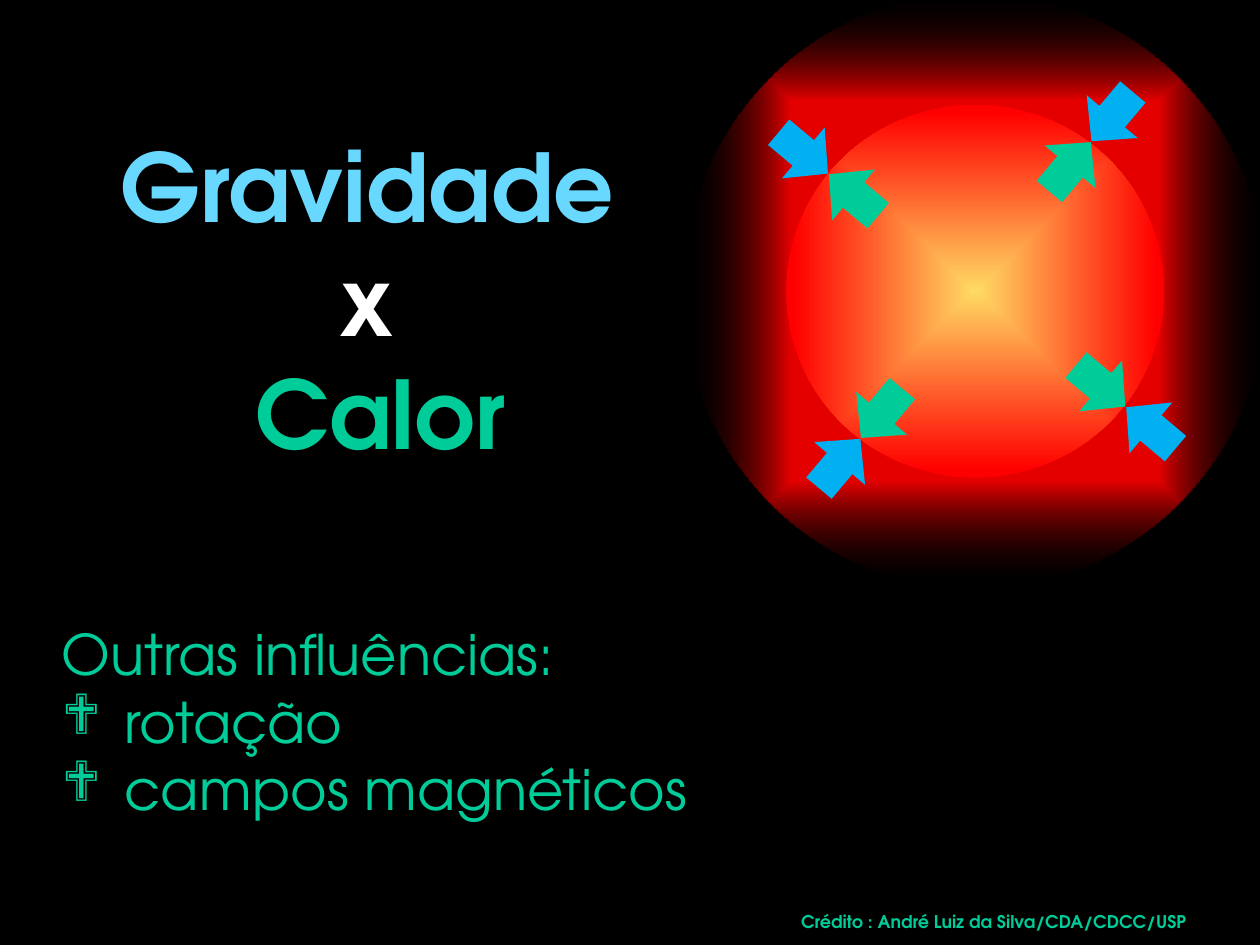
from math import cos, radians, sin

from lxml.etree import SubElement
from pptx import Presentation
from pptx.dml.color import RGBColor
from pptx.enum.shapes import MSO_SHAPE
from pptx.enum.text import MSO_ANCHOR, MSO_AUTO_SIZE, PP_ALIGN
from pptx.oxml.ns import qn
from pptx.util import Pt

FONT = "TeX Gyre Adventor"
GREEN = "00CC99"
GRAVITY_BLUE = "00B0F0"
ARROW_WIDTH, ARROW_HEIGHT = 38, 36.8
REACH = 18.7
CONTACTS = [
    (40, 491.8, 250.5),
    (130, 473.4, 99.4),
    (220, 623.5, 81),
    (310, 643.3, 232.5),
]


def color(value):
    """Turn a hex string into a colour."""
    return RGBColor.from_string(value)


def write(paragraph, text, size=32, fill=GREEN, bold=False):
    """Add a formatted run to a paragraph."""
    run = paragraph.add_run()
    run.text = text
    run.font.name = FONT
    run.font.size = Pt(size)
    run.font.bold = bold
    run.font.color.rgb = color(fill)


def place(box, left, top, width, height):
    """Move and size a text holder and return its wrapped frame."""
    box.left, box.top = Pt(left), Pt(top)
    box.width, box.height = Pt(width), Pt(height)
    frame = box.text_frame
    frame.word_wrap = True
    frame.auto_size = MSO_AUTO_SIZE.NONE
    return frame


def set_bullet(paragraph, mark=None, indent=0):
    """Give a paragraph a hanging bullet, or none."""
    properties = paragraph._p.get_or_add_pPr()
    properties.set("marL", str(Pt(indent)))
    properties.set("indent", str(-Pt(indent)))
    if mark:
        SubElement(properties, qn("a:buFont"), typeface="Wingdings")
        SubElement(properties, qn("a:buChar"), char=mark)
    else:
        SubElement(properties, qn("a:buNone"))


def add_plain_shape(shapes, preset, left, top, width, height):
    """Add a preset shape without line or shadow."""
    shape = shapes.add_shape(preset, Pt(left), Pt(top), Pt(width), Pt(height))
    shape.shadow.inherit = False
    shape.line.fill.background()
    return shape


def add_glow(shapes, left, top, width, height, stops):
    """Add an ellipse whose colours spread out from its centre."""
    glow = add_plain_shape(shapes, MSO_SHAPE.OVAL, left, top, width, height)
    glow.fill.gradient()
    gradient = glow.element.spPr.find(qn("a:gradFill"))
    gradient.clear()
    gradient.set("rotWithShape", "1")
    stop_list = SubElement(gradient, qn("a:gsLst"))
    for position, tint, opacity in stops:
        stop = SubElement(stop_list, qn("a:gs"), pos=str(position * 1000))
        shade = SubElement(stop, qn("a:srgbClr"), val=tint)
        if opacity < 100:
            SubElement(shade, qn("a:alpha"), val=str(opacity * 1000))
    spread = SubElement(gradient, qn("a:path"), path="shape")
    SubElement(spread, qn("a:fillToRect"), l="50000", t="50000", r="50000", b="50000")


def add_force(shapes, angle, contact_x, contact_y, fill):
    """Add an arrow whose tip touches the contact point."""
    center_x = contact_x + REACH * sin(radians(angle))
    center_y = contact_y - REACH * cos(radians(angle))
    force = add_plain_shape(
        shapes, MSO_SHAPE.DOWN_ARROW,
        center_x - ARROW_WIDTH / 2, center_y - ARROW_HEIGHT / 2,
        ARROW_WIDTH, ARROW_HEIGHT,
    )
    force.rotation = angle % 360
    force.fill.solid()
    force.fill.fore_color.rgb = color(fill)


def add_heading(title):
    """Fill the title with the two opposing forces."""
    frame = place(title, 59.8, 116.6, 315.4, 108)
    frame.vertical_anchor = MSO_ANCHOR.MIDDLE
    heading = frame.paragraphs[0]
    heading.alignment = PP_ALIGN.CENTER
    write(heading, "Gravidade ", size=54, fill="69D8FF", bold=True)
    heading.add_line_break()
    write(heading, "x ", size=54, fill="FFFFFF", bold=True)
    heading.add_line_break()
    write(heading, "Calor", size=54, bold=True)


def add_influences(body):
    """Fill the body with the list of other influences."""
    frame = place(body, 28.1, 350.6, 658, 123.8)
    lines = [("Outras influências:", None, 0), ("rotação", "❖", 36), ("campos magnéticos", "❖", 36)]
    for index, (text, mark, indent) in enumerate(lines):
        line = frame.add_paragraph() if index else frame.paragraphs[0]
        line.alignment = PP_ALIGN.JUSTIFY
        line.space_before = Pt(0)
        set_bullet(line, mark, indent)
        write(line, text)


def add_star(shapes):
    """Draw the star's halo and its core."""
    star = shapes.add_group_shape().shapes
    add_glow(star, 390.2, -4.3, 333.4, 340.6, [(63, "FF0000", 89), (100, "000000", 0)])
    add_glow(star, 449.3, 59.8, 216, 213.1, [(0, "FFD963", 100), (96, "FF0000", 100)])


def main():
    """Build the slide and save it."""
    deck = Presentation()
    deck.slide_width, deck.slide_height = Pt(720), Pt(540)
    slide = deck.slides.add_slide(deck.slide_layouts[1])
    slide.background.fill.solid()
    slide.background.fill.fore_color.rgb = color("000000")
    add_heading(slide.shapes.title)
    add_influences(slide.placeholders[1])
    add_star(slide.shapes)
    credit = place(slide.shapes.add_textbox(0, 0, 0, 0), 450.7, 517, 262.8, 19.4)
    write(credit.paragraphs[0], "Crédito : André Luiz da Silva/CDA/CDCC/USP", size=10, bold=True)
    for angle, x, y in CONTACTS:
        add_force(slide.shapes, angle, x, y, GREEN)
        add_force(slide.shapes, angle + 180, x, y, GRAVITY_BLUE)
    deck.save("out.pptx")


if __name__ == "__main__":
    main()
